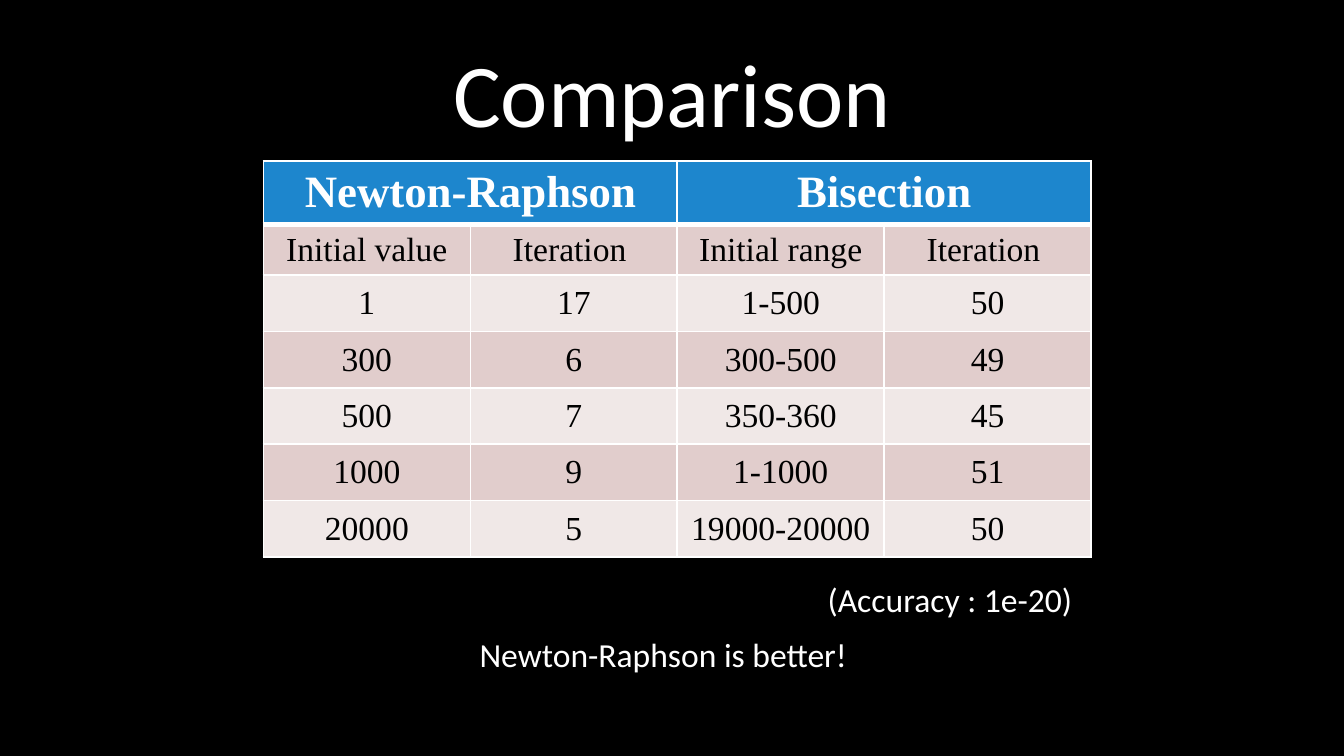
from lxml import etree
from pptx import Presentation
from pptx.dml.color import RGBColor
from pptx.enum.text import MSO_ANCHOR, MSO_AUTO_SIZE, PP_ALIGN
from pptx.oxml.ns import qn
from pptx.util import Inches, Pt

CENTER, LEFT = PP_ALIGN.CENTER, PP_ALIGN.LEFT
MIDDLE = MSO_ANCHOR.MIDDLE
FIT_SHAPE = MSO_AUTO_SIZE.SHAPE_TO_FIT_TEXT
SANS, SERIF = "Calibri", "Times New Roman"
WHITE, BLACK, BLUE = "FFFFFF", "000000", "1D86CD"
BANDS = ("E1CDCC", "F0E8E7")

TITLE = "Comparison"
METHODS = ["Newton-Raphson", "Bisection"]
ROWS = [
    ["Initial value", "Iteration ", "Initial range", "Iteration "],
    ["1", "17", "1-500", "50"],
    ["300", "6", "300-500", "49"],
    ["500", "7", "350-360", "45"],
    ["1000", "9", "1-1000", "51"],
    ["20000", "5", "19000-20000", "50"],
]
NOTES = [
    ("(Accuracy : 1e-20)", 6.06, 4.26, 2.32),
    ("Newton-Raphson is better!", 3.47, 4.67, 3.12),
]
SLIDE_WIDTH = 10
COLUMN_WIDTH = 1.54
ROW_HEIGHTS = [0.45, 0.29] + [0.42] * 5


def color(value):
    return RGBColor.from_string(value)


def write(frame, text, size, font, ink, align=CENTER, bold=False):
    para = frame.paragraphs[0]
    para.text = text
    para.alignment = align
    para.font.size = Pt(size)
    para.font.name = font
    para.font.bold = bold
    para.font.color.rgb = color(ink)


def add_borders(cell, top, bottom):
    properties = cell._tc.get_or_add_tcPr()
    for side, width in (("L", 1), ("R", 1), ("T", top), ("B", bottom)):
        line = etree.SubElement(properties, qn(f"a:ln{side}"), w=str(Pt(width)))
        fill = etree.SubElement(line, qn("a:solidFill"))
        etree.SubElement(fill, qn("a:srgbClr"), val=WHITE)


def style_cell(cell, fill, top, bottom):
    add_borders(cell, top, bottom)
    cell.fill.solid()
    cell.fill.fore_color.rgb = color(fill)
    cell.vertical_anchor = MIDDLE


def add_comparison(page):
    columns = len(ROWS[0])
    table = page.shapes.add_table(
        len(ROW_HEIGHTS), columns, Inches(1.96), Inches(1.2),
        Inches(COLUMN_WIDTH * columns), Inches(sum(ROW_HEIGHTS))).table
    for column in table.columns:
        column.width = Inches(COLUMN_WIDTH)
    for row, height in zip(table.rows, ROW_HEIGHTS):
        row.height = Inches(height)

    for index in range(columns):
        style_cell(table.cell(0, index), BLUE, 1, 3)
    for index, method in enumerate(METHODS):
        header = table.cell(0, 2 * index)
        header.merge(table.cell(0, 2 * index + 1))
        write(header.text_frame, method, 24, SERIF, WHITE, bold=True)

    for row_index, values in enumerate(ROWS):
        for column_index, value in enumerate(values):
            cell = table.cell(row_index + 1, column_index)
            style_cell(cell, BANDS[row_index % 2], 1 if row_index else 3, 1)
            write(cell.text_frame, value, 18, SERIF, BLACK)


def main():
    deck = Presentation()
    deck.slide_width = Inches(SLIDE_WIDTH)
    deck.slide_height = Inches(SLIDE_WIDTH * 9 / 16)
    page = deck.slides.add_slide(deck.slide_layouts[5])
    page.background.fill.solid()
    page.background.fill.fore_color.rgb = color(BLACK)

    title = page.shapes.title
    title.left, title.top = Inches(0.75), Inches(0.1)
    title.width, title.height = Inches(8.5), Inches(1.17)
    title.text_frame.vertical_anchor = MIDDLE
    write(title.text_frame, TITLE, 48, SANS, WHITE)

    add_comparison(page)

    for text, left, top, width in NOTES:
        box = page.shapes.add_textbox(
            Inches(left), Inches(top), Inches(width), Inches(0.4))
        box.text_frame.word_wrap = True
        box.text_frame.auto_size = FIT_SHAPE
        write(box.text_frame, text, 18, SANS, WHITE, LEFT)

    deck.save("out.pptx")


if __name__ == "__main__":
    main()
